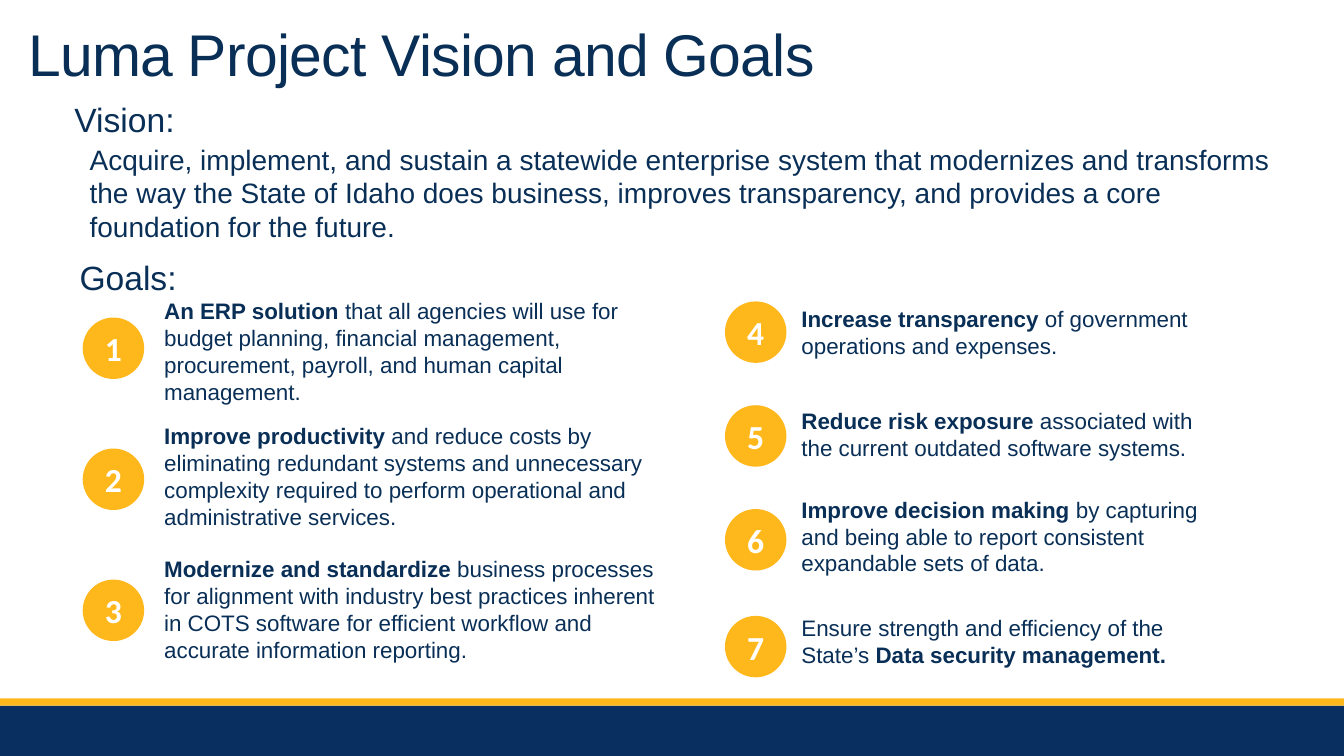
from pptx import Presentation
from pptx.dml.color import RGBColor as RGB
from pptx.enum.shapes import MSO_SHAPE as Shape
from pptx.enum.text import MSO_ANCHOR as Anchor, PP_ALIGN as Align
from pptx.util import Inches, Pt

TITLE = "Luma Project Vision and Goals"
VISION = (
    "Acquire, implement, and sustain a statewide enterprise system that modernizes "
    "and transforms the way the State of Idaho does business, improves transparency, "
    "and provides a core foundation for the future."
)
# Each goal: circle top, text top, text height, runs as (text, bold)
GOAL_COLUMNS = [
    {"circle_left": 0.82, "text_left": 1.53, "text_width": 5.11, "goals": [
        (3.15, 2.9, 1.18, [
            ("An ERP solution ", True),
            ("that all agencies will use for budget planning, financial management, "
             "procurement, payroll, and human capital management.", False)]),
        (4.45, 4.14, 1.18, [
            ("Improve productivity ", True),
            ("and reduce costs by eliminating redundant systems and unnecessary complexity "
             "required to perform operational and administrative services.", False)]),
        (5.75, 5.46, 1.18, [
            ("Modernize and standardize ", True),
            ("business processes for alignment with industry best practices inherent in "
             "COTS software for efficient workflow and accurate information reporting.", False)]),
    ]},
    {"circle_left": 7.19, "text_left": 7.85, "text_width": 4.15, "goals": [
        (2.99, 2.98, 0.64, [
            ("Increase transparency ", True),
            ("of government operations and expenses.", False)]),
        (4.02, 3.99, 0.64, [
            ("Reduce risk exposure ", True),
            ("associated with the current outdated software systems.", False)]),
        (5.05, 4.87, 0.91, [
            ("Improve decision making ", True),
            ("by capturing and being able to report consistent expandable sets of data.", False)]),
        (6.11, 6.04, 0.64, [
            ("Ensure strength and efficiency of the State’s ", False),
            ("Data security management.", True)]),
    ]},
]
THEME = {
    "navy": RGB(0x09, 0x2F, 0x57), "footer": RGB(0x09, 0x2F, 0x61),
    "gold": RGB(0xFF, 0xB8, 0x1C), "white": RGB(0xFF, 0xFF, 0xFF),
    "font": "Arial", "number_font": "Calibri",
    "title": 42, "heading": 24, "vision": 20, "goal": 16, "number": 24,
}
CIRCLE = 0.61


def style(p, size, color="navy", font="font"):
    p.font.size = Pt(THEME[size])
    p.font.name = THEME[font]
    p.font.color.rgb = THEME[color]


def add_shape(s, kind, color, *box):
    sp = s.shapes.add_shape(kind, *map(Inches, box))
    sp.shadow.inherit = False
    sp.fill.solid()
    sp.fill.fore_color.rgb = THEME[color]
    sp.line.fill.background()
    return sp


def add_text(s, runs, size, *box):
    tf = s.shapes.add_textbox(*map(Inches, box)).text_frame
    tf.word_wrap = True
    p = tf.paragraphs[0]
    for text, bold in runs:
        r = p.add_run()
        r.text = text
        r.font.bold = bold
    style(p, size)
    return tf


def add_number(s, number, left, top):
    tf = add_shape(s, Shape.OVAL, "gold", left, top, CIRCLE, CIRCLE).text_frame
    tf.margin_left = tf.margin_right = tf.margin_top = tf.margin_bottom = 0
    tf.vertical_anchor = Anchor.MIDDLE
    p = tf.paragraphs[0]
    p.text = str(number)
    p.alignment = Align.CENTER
    style(p, "number", "white", "number_font")
    p.font.bold = True


def main():
    prs = Presentation()
    prs.slide_width, prs.slide_height = Inches(13.33), Inches(7.5)
    s = prs.slides.add_slide(prs.slide_layouts[6])

    add_shape(s, Shape.RECTANGLE, "footer", 0, 7, 13.33, 0.5)
    add_shape(s, Shape.RECTANGLE, "gold", 0, 6.93, 13.33, 0.07)

    title = add_text(s, [(TITLE, False)], "title", 0.18, 0.03, 12.98, 1.1)
    title.vertical_anchor = Anchor.MIDDLE
    title.paragraphs[0].line_spacing = 0.85
    title.paragraphs[0].runs[0].font._element.set("spc", "-50")

    add_text(s, [("Vision:", False)], "heading", 0.64, 0.93, 2.9, 0.5)
    add_text(s, [(VISION, False)], "vision", 0.79, 1.36, 12.18, 1.11)
    add_text(s, [("Goals:", False)], "heading", 0.69, 2.5, 2.32, 0.5)

    number = 0
    for column in GOAL_COLUMNS:
        for circle_top, text_top, height, runs in column["goals"]:
            number += 1
            add_number(s, number, column["circle_left"], circle_top)
            add_text(s, runs, "goal", column["text_left"], text_top,
                     column["text_width"], height)

    prs.save("out.pptx")


if __name__ == "__main__":
    main()
